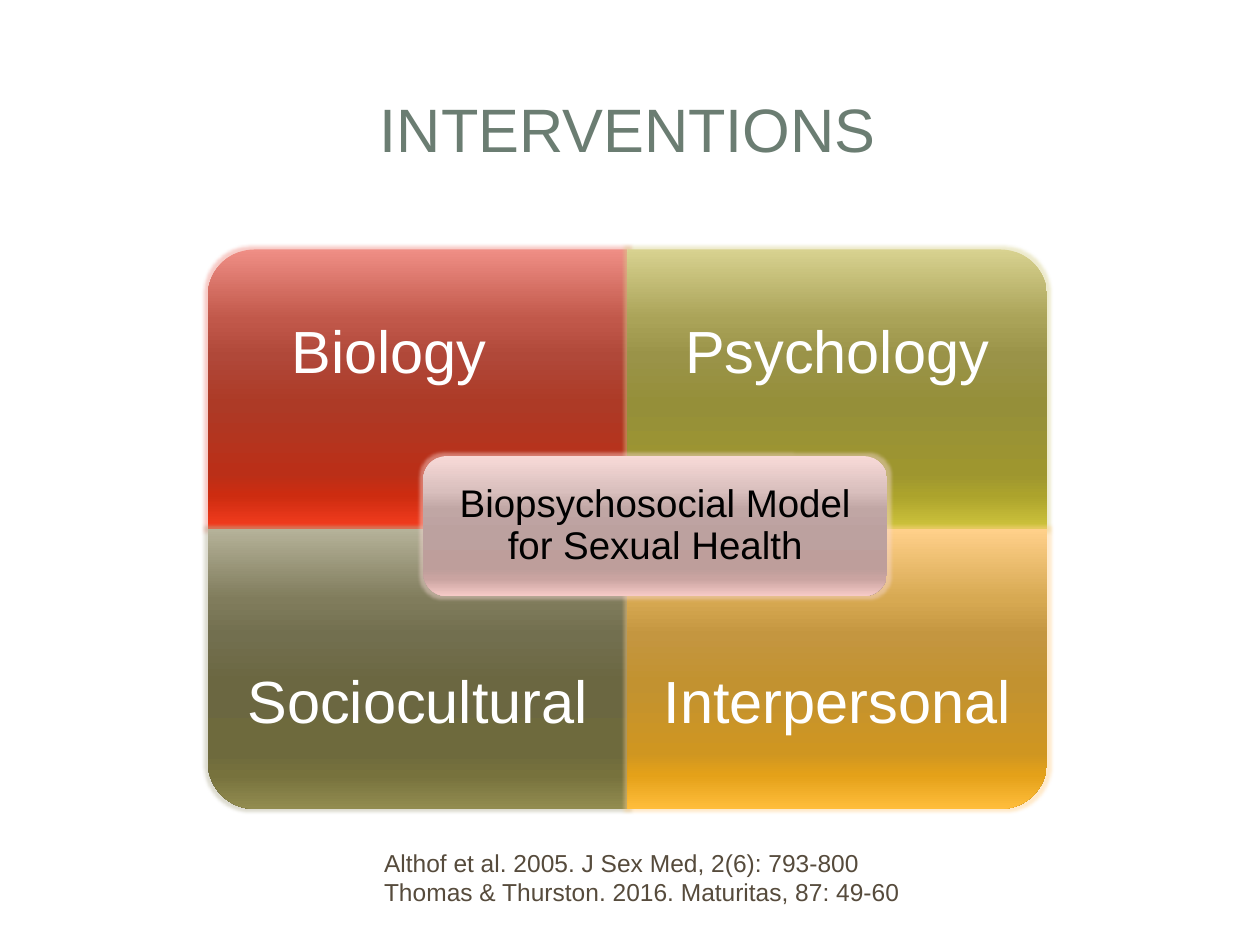
from lxml.etree import SubElement
from pptx import Presentation
from pptx.dml.color import RGBColor
from pptx.enum.shapes import MSO_SHAPE
from pptx.enum.text import MSO_ANCHOR, PP_ALIGN
from pptx.oxml.ns import qn
from pptx.util import Inches, Pt

COLS, ROWS = 100, 75
STOPS = (0, 25, 38, 55, 80, 88, 100)
LEFT, TOP, CELL_W, CELL_H = 16.5, 19.8, 33.3, 22.2
LABEL_H = CELL_H * 0.75

QUADRANTS = [
    ("Biology\t", 0, 0, 270, "EF8E85 C1584A B04839 AD3A26 BA2F18 CD2C10 F63D1F"),
    ("Psychology", 1, 0, 0, "D8D290 AAA358 9A9348 958F39 9E962F ACA32C D0C53D"),
    ("Sociocultural", 0, 1, 180, "B5B299 807C5C 726F4F 6B6741 6E6A3D 77723D 928C50"),
    ("Interpersonal", 1, 1, 90, "FFD08A D7A952 C49640 C29230 CF9621 E4A119 FFBD3B"),
]
HUB_COLORS = "F8DAD8 D9BFBD C0A6A4 BCA19F BE9E9B CAA4A1 F6CAC7"
REFERENCES = [
    "Althof et al. 2005. J Sex Med, 2(6): 793-800",
    "Thomas & Thurston. 2016. Maturitas, 87: 49-60",
]


def rgb(value):
    return RGBColor.from_string(value)


class Deck:
    font = "Arial"

    def __init__(self):
        self.prs = Presentation()
        self.prs.slide_width, self.prs.slide_height = Inches(10), Inches(7.5)
        self.s = self.prs.slides.add_slide(self.prs.slide_layouts[6])

    def place(self, x, y, w, h):
        cw, rh = self.prs.slide_width / COLS, self.prs.slide_height / ROWS
        return [round(v) for v in (x * cw, y * rh, w * cw, h * rh)]

    def label(self, sp, lines, size, color, align=PP_ALIGN.CENTER,
              anchor=MSO_ANCHOR.MIDDLE, inset=(0.1, 0.05), spacing=None):
        tf = sp.text_frame
        tf.word_wrap = True
        tf.vertical_anchor = anchor
        tf.margin_left = tf.margin_right = Inches(inset[0])
        tf.margin_top = tf.margin_bottom = Inches(inset[1])
        for i, line in enumerate(lines):
            p = tf.add_paragraph() if i else tf.paragraphs[0]
            p.alignment = align
            p.line_spacing = spacing
            r = p.add_run()
            r.text = line
            r.font.name, r.font.size = self.font, Pt(size)
            r.font.color.rgb = rgb(color)

    def text(self, box, lines, size, color, **style):
        sp = self.s.shapes.add_textbox(*self.place(*box))
        self.label(sp, lines, size, color, **style)

    def panel(self, kind, box, colors, rotation=0):
        x, y, w, h = box
        if rotation % 180:
            x, y, w, h = x + (w - h) / 2, y + (h - w) / 2, h, w
        sp = self.s.shapes.add_shape(kind, *self.place(x, y, w, h))
        sp.rotation = rotation
        sp.line.fill.background()
        sp.shadow.inherit = False
        sp.fill.gradient()
        self.shade(sp, colors.split())
        return sp

    def shade(self, sp, colors):
        pr = sp._element.spPr
        grad = pr.find(qn("a:gradFill"))
        grad.set("rotWithShape", "0")
        for child in list(grad):
            grad.remove(child)
        stops = SubElement(grad, qn("a:gsLst"))
        for pos, color in zip(STOPS, colors):
            gs = SubElement(stops, qn("a:gs"), pos=str(pos * 1000))
            SubElement(gs, qn("a:srgbClr"), val=color)
        SubElement(grad, qn("a:lin"), ang="5400000", scaled="0")
        glow = SubElement(pr.find(qn("a:effectLst")), qn("a:glow"), rad="50800")
        tint = SubElement(glow, qn("a:srgbClr"), val=colors[0])
        SubElement(tint, qn("a:alpha"), val="45000")


def main():
    deck = Deck()
    deck.text((4.7, 4.5, 90.3, 11.4), ["INTERVENTIONS"], 35, "6B7D72")
    for name, col, row, rotation, colors in QUADRANTS:
        x, y = LEFT + col * CELL_W, TOP + row * CELL_H
        deck.panel(MSO_SHAPE.ROUND_1_RECTANGLE, (x, y, CELL_W, CELL_H), colors, rotation)
        name_y = y + row * (CELL_H - LABEL_H)
        deck.text((x, name_y, CELL_W, LABEL_H), [name], 34, "FFFFFF",
                  inset=(0.26, 0.26), spacing=0.9)
    hub = deck.panel(MSO_SHAPE.ROUNDED_RECTANGLE, (33.6, 36.2, 36.8, 11.1), HUB_COLORS)
    deck.label(hub, ["Biopsychosocial Model for Sexual Health"], 22, "000000",
               inset=(0.1, 0.1), spacing=0.9)
    deck.text((29.5, 66.8, 51.4, 5.7), REFERENCES, 14, "564B3C",
              align=PP_ALIGN.LEFT, anchor=MSO_ANCHOR.TOP)
    deck.prs.save("out.pptx")


if __name__ == "__main__":
    main()
